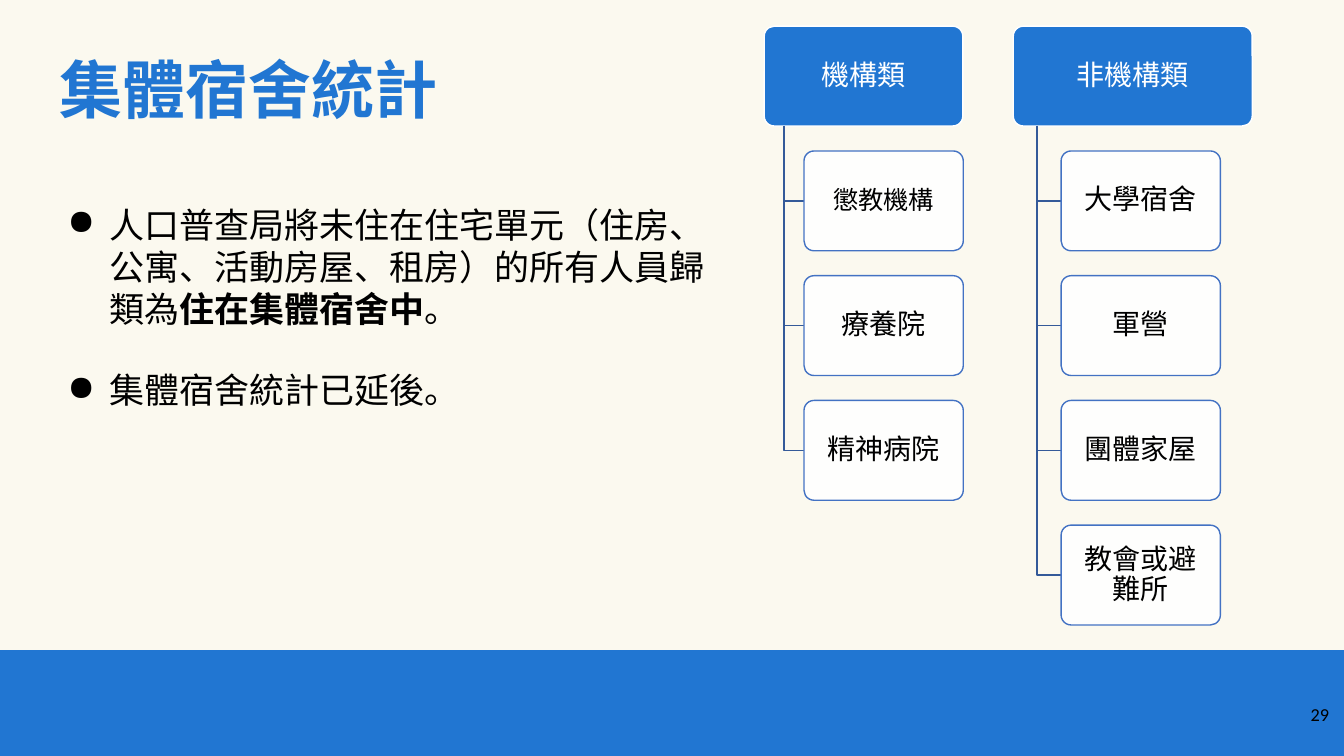
from pptx import Presentation
from pptx.dml.color import RGBColor
from pptx.enum.shapes import MSO_SHAPE
from pptx.enum.text import MSO_ANCHOR, PP_ALIGN
from pptx.oxml.ns import qn
from pptx.util import Inches, Pt
from lxml.etree import SubElement

TITLE = "集體宿舍統計"
PAGE = "29"
POINTS = [
    [("人口普查局將未住在住宅單元（住房、公寓、活動房屋、租房）的所有人員歸類為", False, None),
     ("住在集體宿舍中", True, None), ("。", False, None)],
    [("集體宿舍統計已", False, None), ("延後", False, "Arial"), ("。", False, None)],
]
TREES = [
    ("機構類", 7.58, 1.97, [("懲教機構", 18, "Open Sans"), ("療養院", 20, "Calibri"),
                         ("精神病院", 20, "Calibri")]),
    ("非機構類", 10.05, 2.37, [("大學宿舍", 20, "Calibri"), ("軍營", 20, "Calibri"),
                           ("團體家屋", 20, "Calibri"), ("教會或避難所", 20, "Calibri")]),
]
BLUE, CREAM, WHITE, BLACK = "2176D2", "FBF9EF", "FFFFFF", "000000"
EDGE, STEM = "4372C3", "345A99"
WIDE, HIGH = 13.33, 7.5
TOP, TALL, LEAF = 0.26, 0.99, 1.58
PITCH = TALL * 1.25

deck = Presentation()
deck.slide_width, deck.slide_height = Inches(WIDE), Inches(HIGH)
slide = deck.slides.add_slide(deck.slide_layouts[6])
shapes = slide.shapes


def tint(hue):
    return RGBColor.from_string(hue)


def style(para, size, face, hue, bold=False):
    font = para.font
    font.size, font.name, font.bold = Pt(size), face, bold
    font.color.rgb = tint(hue)


def paint(shape, fill, line=None):
    shape.shadow.inherit = False
    shape.fill.solid()
    shape.fill.fore_color.rgb = tint(fill)
    if line:
        shape.line.color.rgb = tint(line)
        shape.line.width = Pt(1)
    else:
        shape.line.fill.background()


def write(x, y, w, h):
    frame = shapes.add_textbox(*map(Inches, (x, y, w, h))).text_frame
    frame.word_wrap = True
    return frame


def node(text, x, y, w, size, face, fill, line, hue):
    box = shapes.add_shape(MSO_SHAPE.ROUNDED_RECTANGLE, *map(Inches, (x, y, w, TALL)))
    box.adjustments[0] = 0.1
    paint(box, fill, line)
    frame = box.text_frame
    frame.word_wrap = True
    frame.vertical_anchor = MSO_ANCHOR.MIDDLE
    frame.margin_left = frame.margin_right = Inches(0.07)
    frame.margin_top = frame.margin_bottom = Inches(0.06)
    para = frame.paragraphs[0]
    para.text = text
    para.alignment = PP_ALIGN.CENTER
    para.line_spacing = 0.9
    style(para, size, face, hue)
    return box


def branch(x, y, right, low):
    path = shapes.build_freeform(Inches(x), Inches(y))
    path.add_line_segments([(Inches(x), Inches(low)), (Inches(right), Inches(low))], close=False)
    stem = path.convert_to_shape()
    stem.shadow.inherit = False
    stem.fill.background()
    stem.line.color.rgb = tint(STEM)
    stem.line.width = Pt(1)


slide.background.fill.solid()
slide.background.fill.fore_color.rgb = tint(CREAM)
band = shapes.add_shape(MSO_SHAPE.RECTANGLE, *map(Inches, (0, HIGH * 0.86, WIDE, HIGH * 0.14)))
paint(band, BLUE)

head = write(0.49, 0.45, 10.3, 0.86).paragraphs[0]
head.text = TITLE
style(head, 45, "Montserrat", BLUE, True)

for name, left, width, leaves in TREES:
    node(name, left, TOP, width, 20, "Open Sans", BLUE, WHITE, WHITE)
    trunk, inner = left + width * 0.1, left + width * 0.2
    for row, (text, size, face) in enumerate(leaves, 1):
        y = TOP + row * PITCH
        branch(trunk, TOP + TALL, inner, y + TALL / 2)
        leaf = node(text, inner, y, LEAF, size, face, WHITE, EDGE, BLACK)
        shade = leaf.fill._xPr.find(qn("a:solidFill"))[0]
        SubElement(shade, qn("a:alpha")).set("val", "89000")

body = write(0.49, 1.97, 6.7, 4.29)
for num, runs in enumerate(POINTS):
    para = body.add_paragraph() if num else body.paragraphs[0]
    if num:
        para.space_before = Pt(28)
    props = para._p.get_or_add_pPr()
    props.set("marL", str(Inches(0.5)))
    props.set("indent", str(Inches(-0.42)))
    dot = SubElement(props, qn("a:buClr"))
    SubElement(dot, qn("a:srgbClr")).set("val", BLACK)
    SubElement(props, qn("a:buChar")).set("char", "●")
    style(para, 25, "Open Sans", BLACK)
    for text, bold, face in runs:
        run = para.add_run()
        run.text = text
        if bold:
            run.font.bold = True
        if face:
            run.font.name = face

foot = write(12.48, 6.93, 0.8, 0.57).paragraphs[0]
foot.text = PAGE
foot.alignment = PP_ALIGN.RIGHT
style(foot, 13, "Calibri", BLACK)

deck.save("out.pptx")
